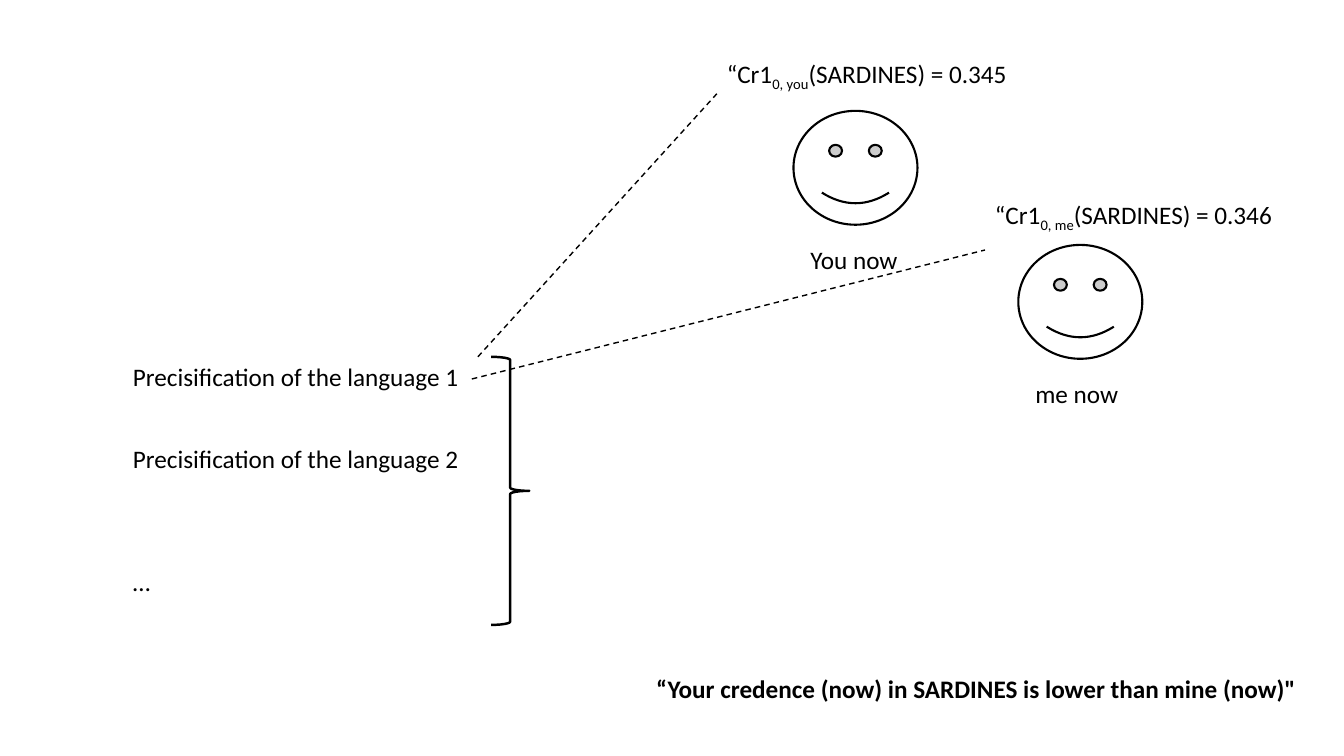
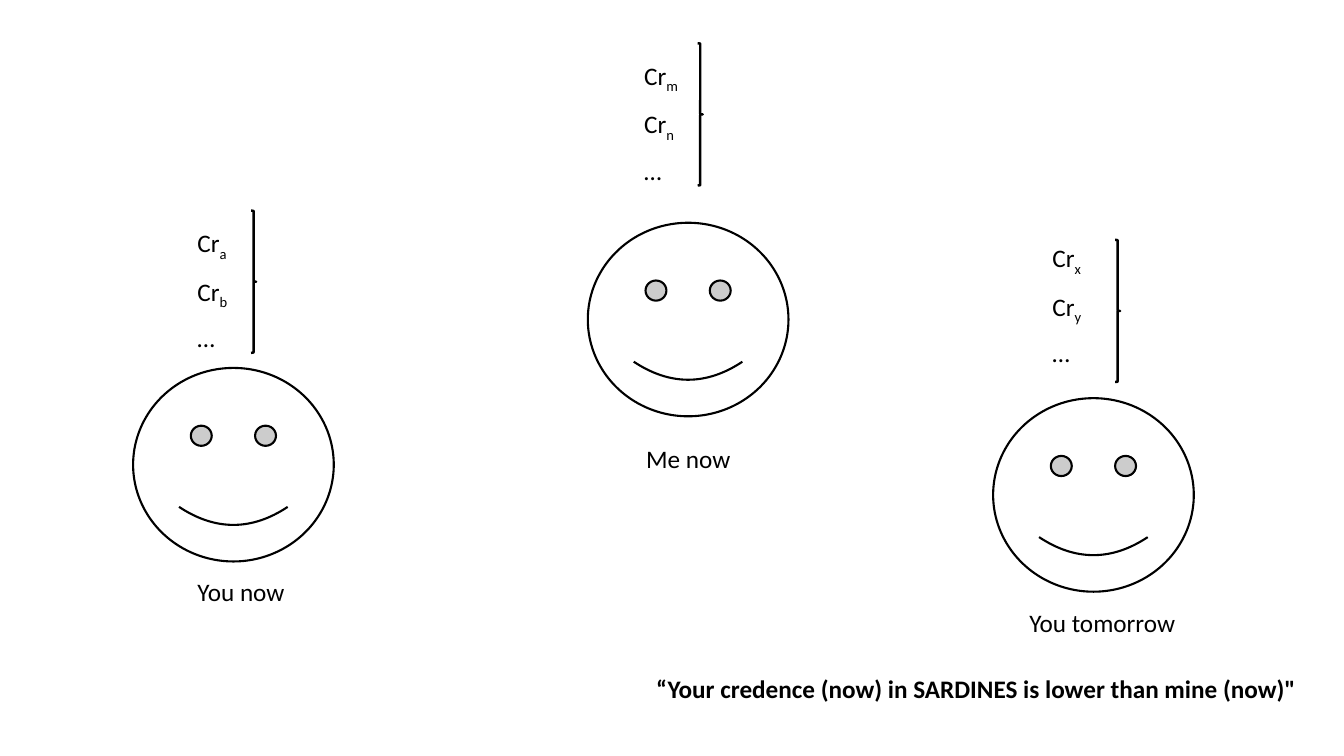
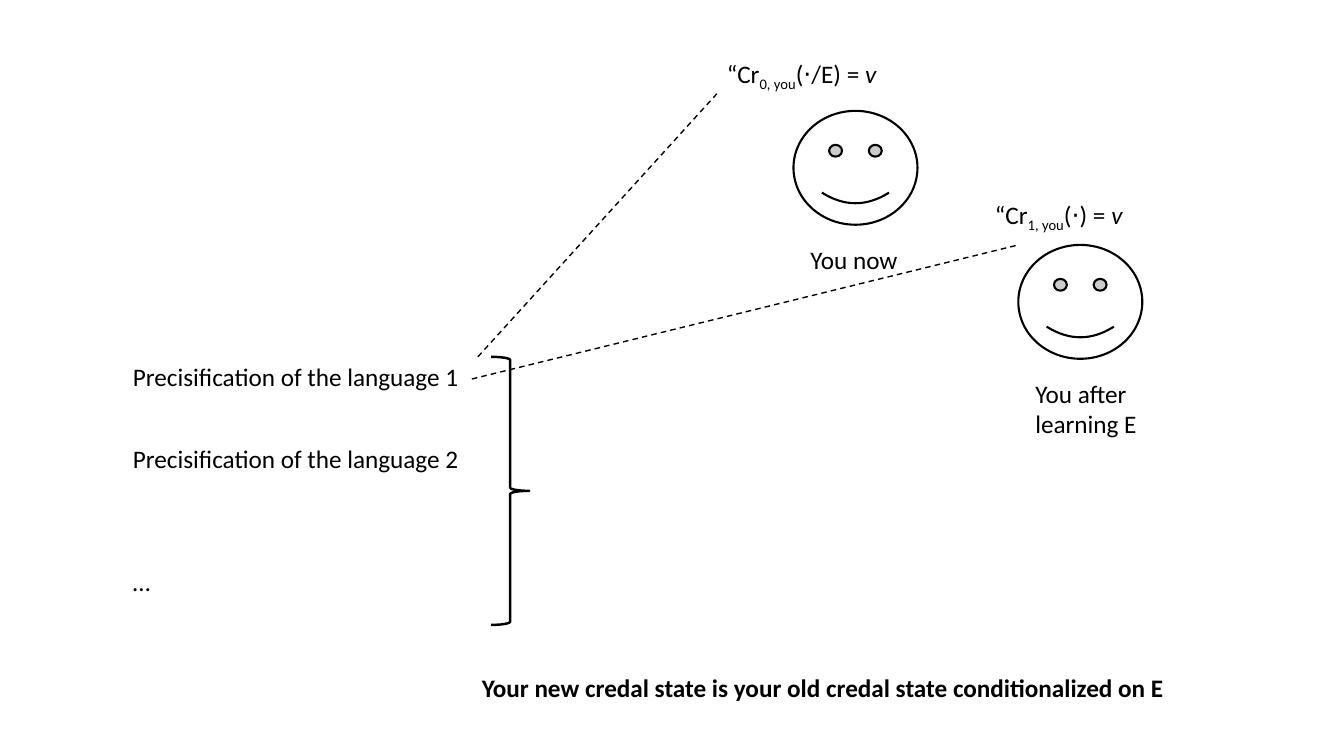
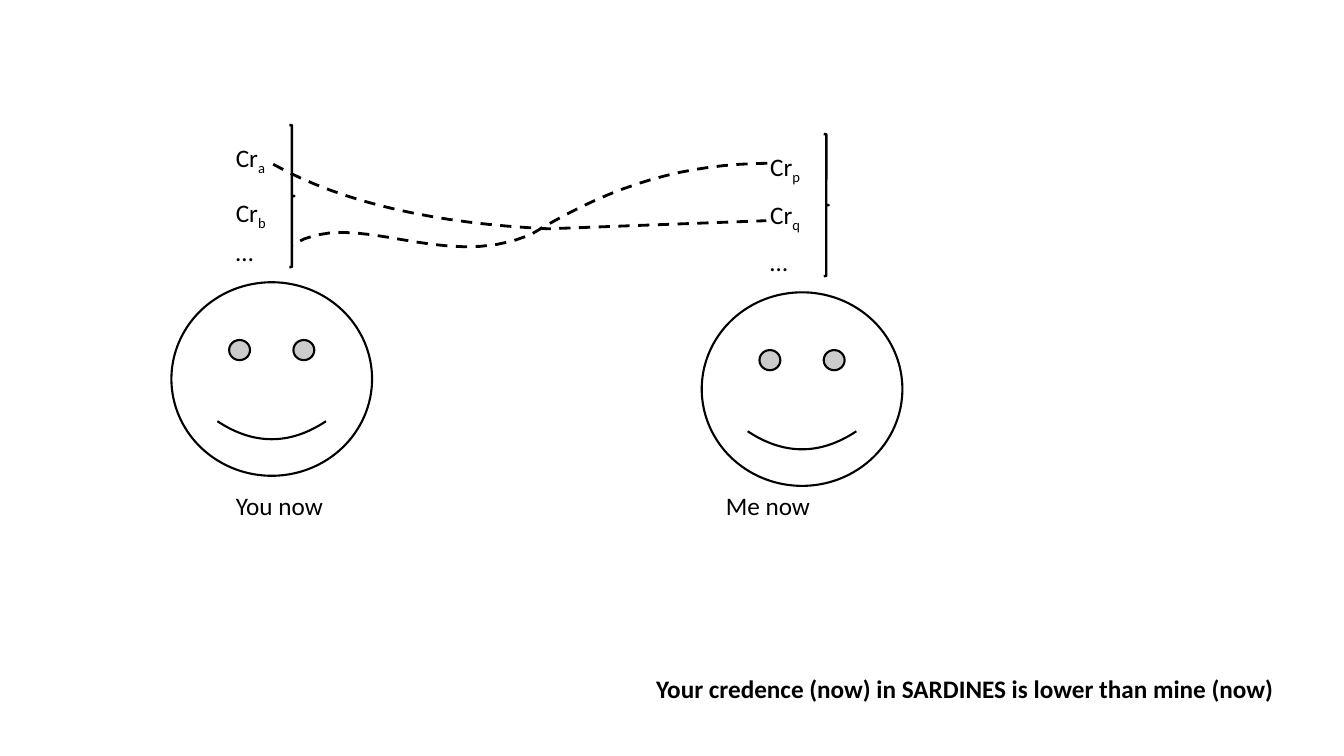
from lxml.etree import SubElement
from pptx import Presentation
from pptx.dml.color import RGBColor
from pptx.enum.dml import MSO_LINE
from pptx.enum.shapes import MSO_CONNECTOR, MSO_SHAPE
from pptx.enum.text import MSO_AUTO_SIZE
from pptx.oxml.ns import qn
from pptx.util import Emu, Pt

SCALE = 9144
INK = "000000"
PAPER = "FFFFFF"
FONT = "Calibri"
ROW = 40
LARGE_FACE = (199, 192)
SMALL_FACE = (123, 113)
SARDINES_CLAIM = "Your credence (now) in SARDINES is lower than mine (now)"


def px(length):
    return Emu(round(length * SCALE))


def color(value):
    return RGBColor.from_string(value)


def style_line(line, width, dashed=False):
    line.color.rgb = color(INK)
    line.width = Pt(width)
    if dashed:
        line.dash_style = MSO_LINE.DASH


def add_label(slide, left, top, width, *pieces, bold=False, height=ROW):
    box = slide.shapes.add_textbox(px(left), px(top), px(width), px(height))
    frame = box.text_frame
    frame.word_wrap = True
    frame.auto_size = MSO_AUTO_SIZE.SHAPE_TO_FIT_TEXT
    for piece in pieces:
        text, style = piece if isinstance(piece, tuple) else (piece, None)
        run = frame.paragraphs[0].add_run()
        run.text = text
        run.font.name = FONT
        run.font.size = Pt(18)
        run.font.color.rgb = color(INK)
        if bold:
            run.font.bold = True
        if style == "italic":
            run.font.italic = True
        if style == "sub":
            run._r.get_or_add_rPr().set("baseline", "-25000")


def add_outline(slide, kind, left, top, width, height, weight, fill=None):
    outline = slide.shapes.add_shape(kind, px(left), px(top), px(width), px(height))
    outline.shadow.inherit = False
    style_line(outline.line, weight)
    if fill:
        outline.fill.solid()
        outline.fill.fore_color.rgb = color(fill)
    else:
        outline.fill.background()


def add_brace(slide, left, top, width, height):
    add_outline(slide, MSO_SHAPE.RIGHT_BRACE, left, top, width, height, 1.75)


def add_person(slide, left, top, size, caption, offset, width=382, height=ROW):
    add_outline(slide, MSO_SHAPE.SMILEY_FACE, left, top, *size, 1.5, PAPER)
    add_label(slide, left + offset[0], top + offset[1], width, caption, height=height)


def add_credences(slide, left, top, subscripts, brace_offset=(63, -12), second_row=48):
    for subscript, row in zip(subscripts, (0, second_row)):
        add_label(slide, left, top + row, 382, "Cr", (subscript, "sub"))
    add_label(slide, left, top + 94, 382, "…")
    add_brace(slide, left + brace_offset[0], top + brace_offset[1], 5, 141)


def add_claim(slide, text, left=641, top=663):
    add_label(slide, left, top, 982, text, bold=True)


def add_dashed_link(slide, start, end):
    link = slide.shapes.add_connector(
        MSO_CONNECTOR.STRAIGHT, px(start[0]), px(start[1]), px(end[0]), px(end[1]))
    style_line(link.line, 1, dashed=True)
    SubElement(link._element.spPr, qn("a:effectLst"))


def bezier(start, first, second, end, steps=16):
    points = []
    for step in range(1, steps + 1):
        t = step / steps
        weights = ((1 - t) ** 3, 3 * t * (1 - t) ** 2, 3 * t ** 2 * (1 - t), t ** 3)
        points.append(tuple(
            sum(w * p[axis] for w, p in zip(weights, (start, first, second, end)))
            for axis in (0, 1)))
    return points


def add_dashed_curve(slide, points):
    builder = slide.shapes.build_freeform(px(points[0][0]), px(points[0][1]))
    builder.add_line_segments([(px(x), px(y)) for x, y in points[1:]], close=False)
    curve = builder.convert_to_shape()
    curve.shadow.inherit = False
    curve.fill.background()
    style_line(curve.line, 2, dashed=True)


def add_precisifications(slide, left, top):
    add_label(slide, left, top, 859, "Precisification of the language 1")
    add_label(slide, left, top + 81, 459, "Precisification of the language 2")
    add_label(slide, left, top + 203, 459, "…")
    add_brace(slide, left + 365, top, 38, 266)


def add_language_slide(new_slide, first_credence, second_credence, second_caption,
                       second_caption_size, second_link_end):
    slide = new_slide()
    add_precisifications(slide, 122, 354)
    add_person(slide, 787, 110, SMALL_FACE, "You now", (7, 127), 145)
    add_person(slide, 1010, 243, SMALL_FACE, second_caption, (7, 127),
               *second_caption_size)
    add_label(slide, 711, 53, 545, *first_credence)
    add_label(slide, 977, 193, 333, *second_credence)
    add_dashed_link(slide, (474, 354), (711, 93))
    add_dashed_link(slide, (468, 376), second_link_end)
    return slide


def add_three_people_slide(new_slide):
    slide = new_slide()
    add_person(slide, 132, 365, LARGE_FACE, "You now", (54, 202))
    add_person(slide, 985, 395, LARGE_FACE, "You tomorrow", (26, 203))
    add_person(slide, 583, 221, LARGE_FACE, "Me now", (48, 214))
    add_credences(slide, 186, 221, "ab")
    add_credences(slide, 1034, 236, "xy", (72, 2))
    add_credences(slide, 629, 55, "mn")
    add_claim(slide, f"“{SARDINES_CLAIM}\"")


def add_matching_slide(new_slide):
    slide = new_slide()
    add_person(slide, 170, 280, LARGE_FACE, "You now", (54, 202))
    add_person(slide, 696, 290, LARGE_FACE, "Me now", (14, 192))
    add_credences(slide, 224, 136, "ab", second_row=55)
    add_credences(slide, 754, 145, "pq")
    a, p, crossing = (271, 163), (761, 162), (526, 233)
    add_dashed_curve(slide, [a, *bezier(a, (341, 202), (434, 222), (544, 227)), (760, 219)])
    add_claim(slide, SARDINES_CLAIM)
    add_dashed_curve(slide, [
        p,
        *bezier(p, (682, 163), (613, 180), crossing),
        *bezier(crossing, (438, 270), (351, 205), (290, 243))])


def main():
    deck = Presentation()
    deck.slide_width, deck.slide_height = px(1333), px(750)

    def new_slide():
        return deck.slides.add_slide(deck.slide_layouts[6])

    comparison = add_language_slide(
        new_slide,
        ("“Cr1", ("0, you", "sub"), "(SARDINES) = 0.345"),
        ("“Cr1", ("0, me", "sub"), "(SARDINES) = 0.346"),
        "me now", (145, ROW), (977, 248))
    add_claim(comparison, f"“{SARDINES_CLAIM}\"")

    add_three_people_slide(new_slide)

    learning = add_language_slide(
        new_slide,
        ("“Cr", ("0, you", "sub"), "(⋅/E) = ", ("v", "italic")),
        ("“Cr", ("1, you", "sub"), "(⋅) = ", ("v", "italic")),
        "You after learning E", (179, 71), (1010, 243))
    add_claim(learning, "Your new credal state is your old credal state conditionalized on E",
              468, 662)

    add_matching_slide(new_slide)
    deck.save("out.pptx")


if __name__ == "__main__":
    main()
